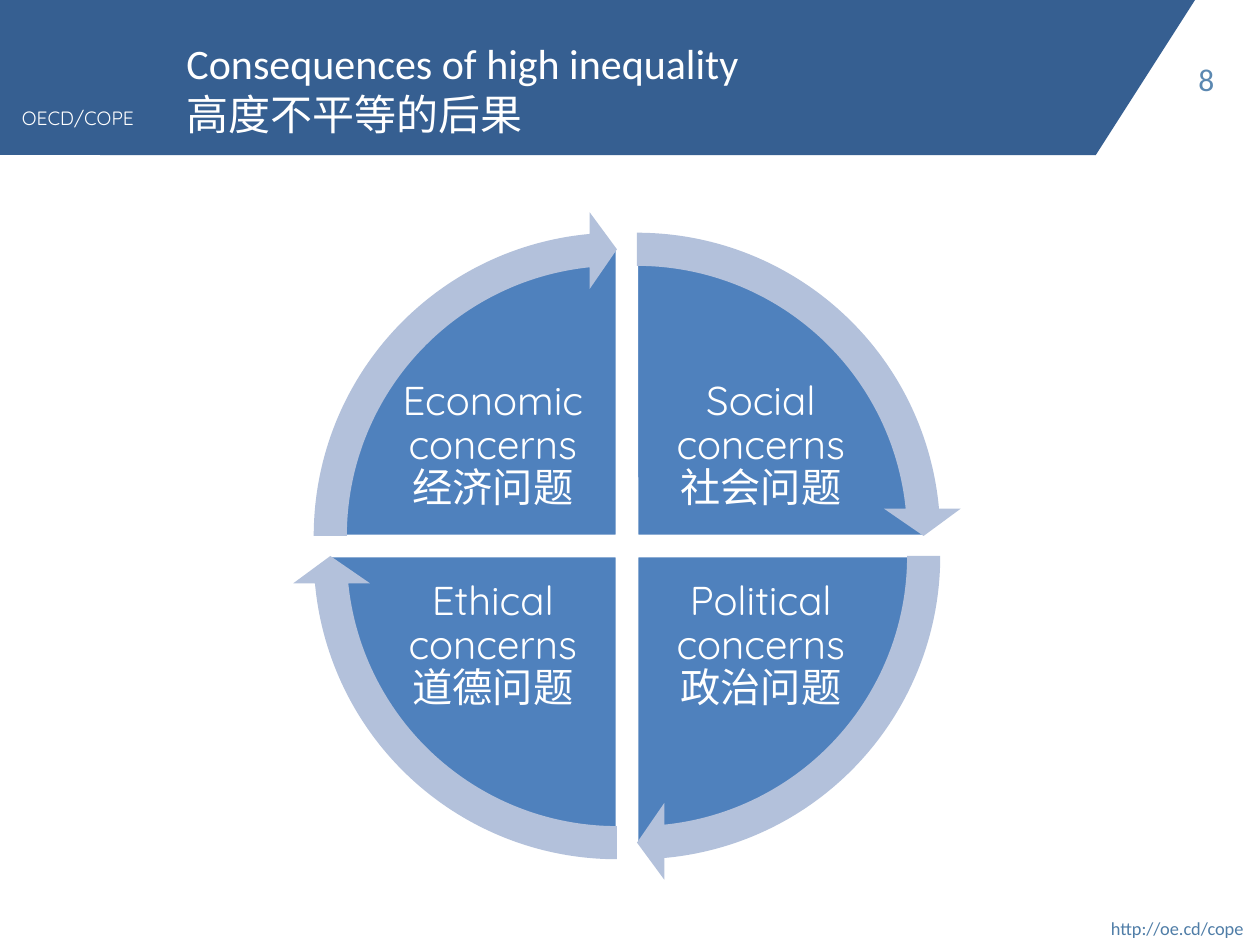
from dataclasses import dataclass

from pptx import Presentation
from pptx import util as u
from pptx.dml.color import RGBColor
from pptx.enum import shapes, text

PX = 914400 / 126
MSO = shapes.MSO_SHAPE
ALIGN = text.PP_ALIGN
ANCHOR = text.MSO_ANCHOR


@dataclass(frozen=True)
class Theme:
    banner: str = "365F91"
    sector: str = "4F81BD"
    arrow: str = "B3C1DB"
    white: str = "FFFFFF"
    link: str = "4F7DA7"
    number: str = "5B88B1"
    body_font: str = "Calibri"
    label_font: str = "Quicksand"
    title_size: float = 24
    sector_size: float = 23
    number_size: float = 18
    unit_size: float = 11
    link_size: float = 10.5


T = Theme()

# Clockwise from top right: text, x side, y side
CONCERNS = [
    ("Social concerns 社会问题", 1, -1),
    ("Political concerns 政治问题", 1, 1),
    ("Ethical concerns 道德问题", -1, 1),
    ("Economic concerns 经济问题", -1, -1),
]
QUARTER = 54  # 90 degrees in adjustment units


def emu(*lengths):
    return [u.Emu(round(n * PX)) for n in lengths]


def centred(cx, cy, w, h):
    return cx - w / 2, cy - h / 2, w, h


def add_solid(s, kind, box, fill, adjustments=(), outline=None):
    sp = s.shapes.add_shape(kind, *emu(*box))
    sp.shadow.inherit = False
    for i, value in enumerate(adjustments):
        sp.adjustments[i] = value
    sp.fill.solid()
    sp.fill.fore_color.rgb = RGBColor.from_string(fill)
    if outline:
        sp.line.color.rgb = RGBColor.from_string(outline)
        sp.line.width = u.Pt(1.5)
    else:
        sp.line.fill.background()
    return sp


def add_label(s, box, words, font, size, color, frame=None, para=None):
    """Add one paragraph; frame and para hold further format values."""
    tf = s.shapes.add_textbox(*emu(*box)).text_frame
    for name, value in ({"word_wrap": True} | (frame or {})).items():
        setattr(tf, name, value)
    p = tf.paragraphs[0]
    p.text = words
    for name, value in (para or {}).items():
        setattr(p, name, value)
    for r in p.runs:
        for name, value in {"name": font, "size": u.Pt(size)}.items():
            setattr(r.font, name, value)
        r.font.color.rgb = RGBColor.from_string(color)


def add_header(s, x, y, w, h):
    add_solid(s, MSO.RECTANGLE, (x, y, w // 2, h), T.banner)
    slanted = add_solid(s, MSO.TRAPEZOID, (x + 1, y, w - 1, h), T.banner, [0.64])
    slanted.rotation = 180
    add_label(s, (x, y + 100, 156, 36), "OECD/COPE", T.label_font, T.unit_size,
              T.white, para={"alignment": ALIGN.CENTER})
    add_label(s, (x + 174, y + 16, 992, 144),
              "Consequences of high inequality\n高度不平等的后果",
              T.body_font, T.title_size, T.white,
              frame={"vertical_anchor": ANCHOR.MIDDLE})
    add_label(s, (x + 1186, y + 54, 63, 50), "8", T.body_font, T.number_size,
              T.number, frame={"word_wrap": False})


def add_cycle(s, x, y, w, h):
    """Draw four sectors and the arrows around them, centred in the box."""
    cx, cy = x + w / 2, y + h / 2
    gap, pie = 10, w - 72
    hubs = [(cx + gap * sx, cy + gap * sy) for _, sx, sy in CONCERNS]
    starts = [(3 + i) % 4 * QUARTER for i in range(4)]
    margins = dict.fromkeys(
        ("margin_left", "margin_top", "margin_right", "margin_bottom"), emu(4)[0])

    for (words, sx, sy), hub, start in zip(CONCERNS, hubs, starts):
        add_solid(s, MSO.PIE, centred(*hub, pie, pie), T.sector,
                  [start, (start + QUARTER) % (4 * QUARTER)], T.white)
        add_label(s, centred(cx + 134 * sx, cy + 100 * sy, 214, 158), words,
                  T.label_font, T.sector_size, T.white,
                  frame={"vertical_anchor": ANCHOR.MIDDLE} | margins,
                  para={"alignment": ALIGN.CENTER, "line_spacing": 0.9})

    for hub, start in zip(hubs, starts):
        add_solid(s, MSO.CIRCULAR_ARROW, centred(*hub, w, h), T.arrow,
                  [0.051, 3.275, start + 50.725, start, 0.059])


def add_footer(s, x, y, w, h):
    add_label(s, (x, y, w, h), "http://oe.cd/cope", T.body_font, T.link_size,
              T.link, para={"alignment": ALIGN.RIGHT})


def main():
    prs = Presentation()
    prs.slide_width, prs.slide_height = emu(1260, 945)
    s = prs.slides.add_slide(prs.slide_layouts[6])
    add_header(s, 0, 0, 1195, 155)
    add_cycle(s, 302, 221, 650, 650)
    add_footer(s, 992, 911, 264, 33)
    prs.save("out.pptx")


if __name__ == "__main__":
    main()
